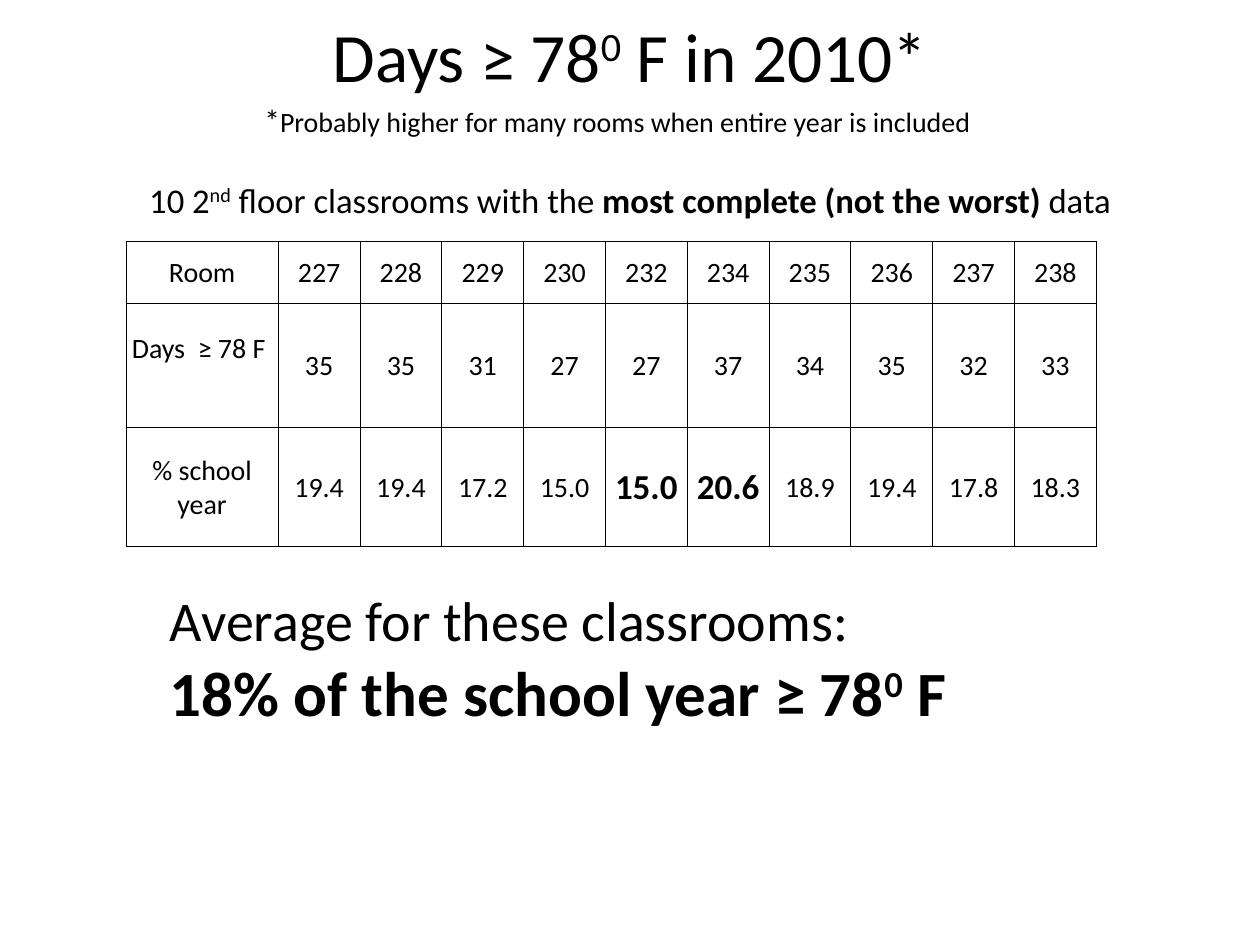
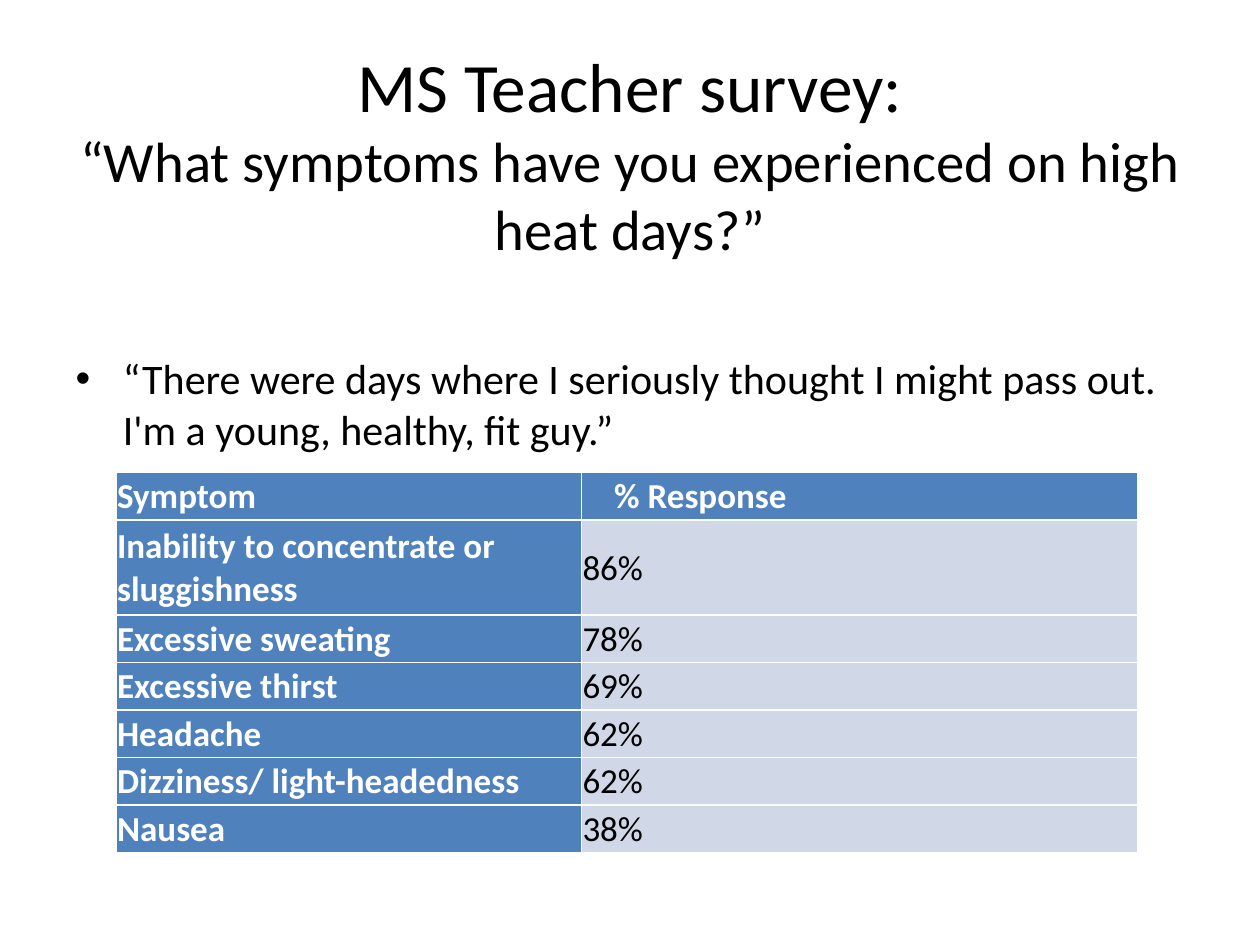
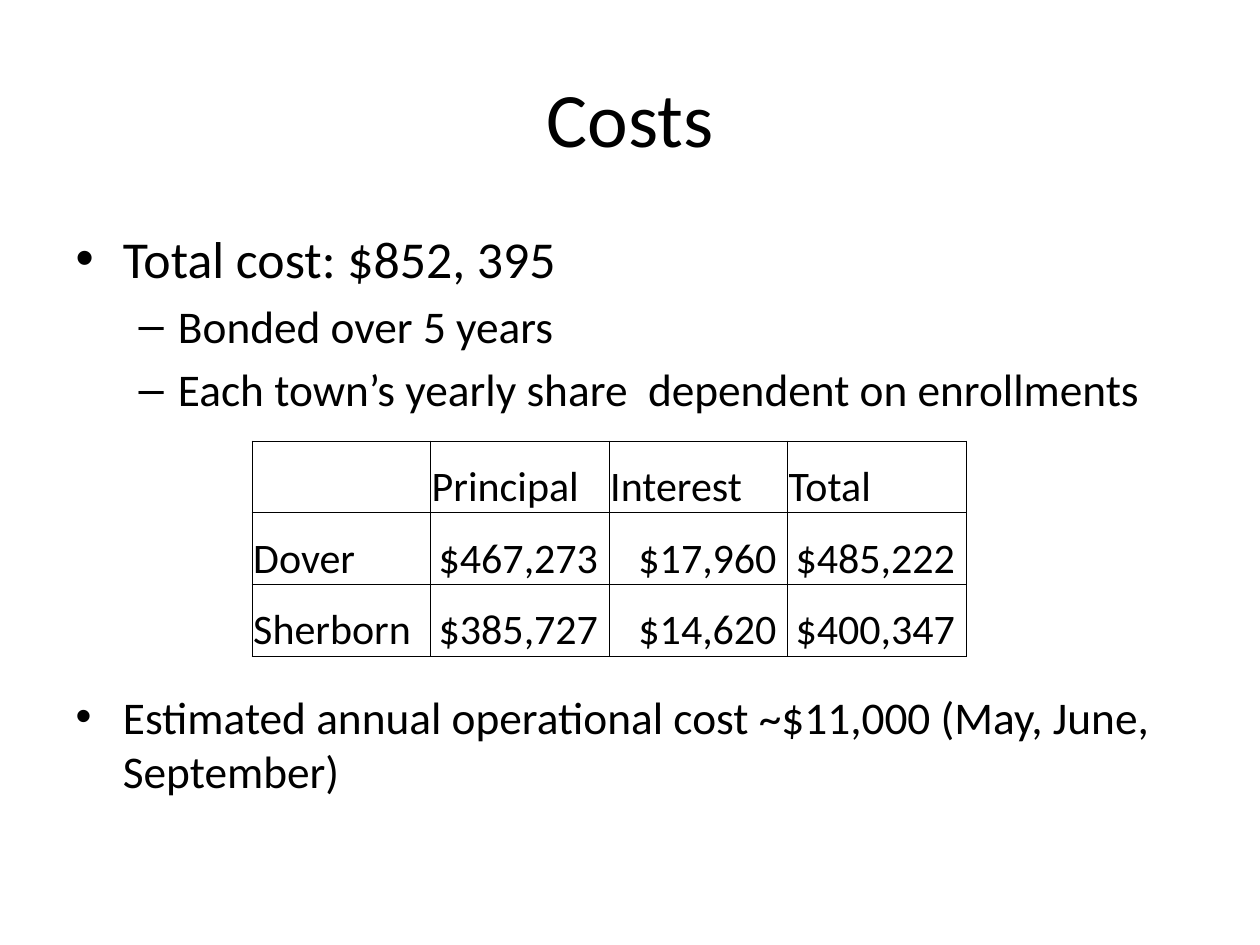
from pptx import Presentation
from pptx.dml.color import RGBColor
from pptx.enum.text import MSO_ANCHOR, MSO_AUTO_SIZE, PP_ALIGN
from pptx.oxml import parse_xml
from pptx.oxml.ns import nsdecls
from pptx.util import Pt

FONT = "Calibri"
BLACK, WHITE = "000000", "FFFFFF"
HEADER_BLUE, PALE_BLUE = "4F81BD", "D0D8E8"
TITLE_BOX = (36, 21.6, 648, 90)
TITLE_ONLY, TITLE_AND_CONTENT = 5, 1


def rgb(hex_color):
    return RGBColor.from_string(hex_color)


def style_run(run, size, bold=False, color=BLACK, raised=False):
    run.font.name = FONT
    run.font.size = Pt(size)
    run.font.bold = bold
    run.font.color.rgb = rgb(color)
    if raised:
        run.font._element.set("baseline", "30000")


def write_line(paragraph, *pieces):
    """Fill a paragraph from (text, size, style options) pieces."""
    for text, size, options in pieces:
        run = paragraph.add_run()
        run.text = text
        style_run(run, size, **options)


def place(shape, box):
    shape.left, shape.top, shape.width, shape.height = map(Pt, box)


def fit_frame(shape, box):
    place(shape, box)
    frame = shape.text_frame
    frame.auto_size = MSO_AUTO_SIZE.NONE
    frame.word_wrap = True
    return frame


def title_frame(slide, box=TITLE_BOX):
    frame = fit_frame(slide.shapes.title, box)
    frame.vertical_anchor = MSO_ANCHOR.MIDDLE
    return frame


def bullet_list(slide, box, items):
    """Fill the body placeholder from (text, level, size) items."""
    frame = fit_frame(slide.placeholders[1], box)
    frame.text = "\n".join(text for text, _, _ in items)
    for paragraph, (_, level, size) in zip(frame.paragraphs, items):
        paragraph.level = level
        style_run(paragraph.runs[0], size)
    return frame


def text_box(slide, box, lines, wrap=True):
    frame = slide.shapes.add_textbox(*map(Pt, box)).text_frame
    frame.word_wrap = wrap
    for index, pieces in enumerate(lines):
        paragraph = frame.add_paragraph() if index else frame.paragraphs[0]
        write_line(paragraph, *pieces)


def border_cell(cell, color, width):
    properties = cell._tc.get_or_add_tcPr()
    for position, side in enumerate(("lnL", "lnR", "lnT", "lnB")):
        properties.insert(position, parse_xml(
            f'<a:{side} {nsdecls("a")} w="{Pt(width)}"><a:solidFill>'
            f'<a:srgbClr val="{color}"/></a:solidFill></a:{side}>'))


def style_cell(cell, size, bold=False, color=BLACK, fill=None,
               align=PP_ALIGN.LEFT, anchor=MSO_ANCHOR.MIDDLE):
    cell.margin_left = cell.margin_right = cell.margin_top = Pt(0.72)
    cell.margin_bottom = 0
    cell.vertical_anchor = anchor
    if fill:
        cell.fill.solid()
        cell.fill.fore_color.rgb = rgb(fill)
    else:
        cell.fill.background()
    paragraph = cell.text_frame.paragraphs[0]
    paragraph.alignment = align
    for run in paragraph.runs:
        style_run(run, size, bold, color)


def add_grid(slide, left, top, widths, heights, values, border, cell_style):
    """Add a table; cell_style(row, column) gives the options of each cell."""
    table = slide.shapes.add_table(
        len(heights), len(widths), Pt(left), Pt(top),
        Pt(sum(widths)), Pt(sum(heights))).table
    table.first_row = table.horz_banding = False
    for column, width in zip(table.columns, widths):
        column.width = Pt(width)
    for row, height in zip(table.rows, heights):
        row.height = Pt(height)
    for r, row_values in enumerate(values):
        for c, value in enumerate(row_values):
            cell = table.cell(r, c)
            cell.text = value
            style_cell(cell, **cell_style(r, c))
            border_cell(cell, *border)
    return table


def hot_days_slide(slide):
    plain, strong, raised = {}, {"bold": True}, {"raised": True}
    frame = title_frame(slide)
    write_line(frame.paragraphs[0], ("Days ≥ 78", 39.6, plain),
               ("0", 39.6, raised), (" F in 2010*", 39.6, plain))
    rooms_line = frame.add_paragraph()
    rooms_line.space_before = Pt(47)
    write_line(rooms_line, ("10 2", 19.8, plain), ("nd", 19.8, raised),
               (" floor classrooms with the", 19.8, plain),
               (" most complete (not the worst) ", 19.8, strong),
               ("data", 19.8, plain))
    text_box(slide, (144, 54, 468, 29), [[
        ("*", 18, plain),
        ("Probably higher for many rooms when entire year is included", 16, plain)]])

    values = [
        "Room 227 228 229 230 232 234 235 236 237 238".split(),
        ["Days  ≥ 78 F"] + "35 35 31 27 27 37 34 35 32 33".split(),
        ["% school year"]
        + "19.4 19.4 17.2 15.0 15.0 20.6 18.9 19.4 17.8 18.3".split(),
    ]

    def room_style(row, column):
        highlighted = row == 2 and column in (5, 6)
        return {"size": 20 if highlighted else 16, "bold": highlighted,
                "align": PP_ALIGN.CENTER}

    table = add_grid(slide, 72, 138, [87] + [46.75] * 10, [35.5, 71, 68],
                     values, (BLACK, 0.5), room_style)
    days_label = table.cell(1, 0)
    days_label.margin_right, days_label.margin_bottom = Pt(4.7), Pt(20)

    text_box(slide, (90, 331.2, 472, 90), [
        [("Average for these classrooms:", 32, plain)],
        [("18% of the school year ≥ 78", 36, strong),
         ("0", 36, {**strong, **raised}), (" F", 36, strong)],
    ], wrap=False)


def survey_slide(slide):
    frame = title_frame(slide, (36, 21.6, 648, 131))
    frame.text = ("MS Teacher survey:\n"
                  "“What symptoms have you experienced on high heat days?”")
    for paragraph, size in zip(frame.paragraphs, (39.6, 32.4)):
        style_run(paragraph.runs[0], size)
    bullet_list(slide, (36, 198, 648, 284.4), [
        ("“There were days where I seriously thought I might pass out. "
         "I'm a young, healthy, fit guy.”", 0, 24)])

    values = [
        ("Symptom", "% Response"),
        ("Inability to concentrate or sluggishness", "86%"),
        ("Excessive sweating", "78%"),
        ("Excessive thirst", "69%"),
        ("Headache", "62%"),
        ("Dizziness/ light-headedness", "62%"),
        ("Nausea", "38%"),
    ]

    def symptom_style(row, column):
        heading = row == 0 or column == 0
        return {"size": 20, "bold": heading,
                "color": WHITE if heading else BLACK,
                "fill": HEADER_BLUE if heading else PALE_BLUE}

    table = add_grid(slide, 66.2, 270, [266, 318],
                     [27.2, 54.2] + [27.2] * 5, values, (WHITE, 1), symptom_style)
    table.cell(0, 1).margin_left = Pt(18.8)


def costs_slide(slide):
    frame = title_frame(slide)
    frame.text = "Costs"
    style_run(frame.paragraphs[0].runs[0], 44)
    bullets = bullet_list(slide, (36, 126, 648, 356.4), [
        ("Total cost: $852, 395", 0, 29.6),
        ("Bonded over 5 years", 1, 25.9),
        ("Each town’s yearly share  dependent on enrollments", 1, 25.9),
        ("Estimated annual operational cost ~$11,000 (May, June, September)",
         0, 25.9),
    ])
    bullets.paragraphs[-1].space_before = Pt(156)

    values = [
        ("", "Principal", "Interest", "Total"),
        ("Dover", "$467,273", "$17,960", "$485,222"),
        ("Sherborn", "$385,727", "$14,620", "$400,347"),
    ]

    def cost_style(row, column):
        amount = row > 0 and column > 0
        return {"size": 24, "anchor": MSO_ANCHOR.BOTTOM,
                "align": PP_ALIGN.RIGHT if amount else PP_ALIGN.LEFT}

    table = add_grid(slide, 144, 252, [102] * 4, [41] * 3, values,
                     (BLACK, 0.5), cost_style)
    for row in (1, 2):
        for column in (1, 2, 3):
            table.cell(row, column).margin_right = Pt(6.2)


def main():
    deck = Presentation()
    deck.slide_width, deck.slide_height = Pt(720), Pt(540)
    for layout, build in ((TITLE_ONLY, hot_days_slide),
                          (TITLE_AND_CONTENT, survey_slide),
                          (TITLE_AND_CONTENT, costs_slide)):
        build(deck.slides.add_slide(deck.slide_layouts[layout]))
    deck.save("out.pptx")


if __name__ == "__main__":
    main()
